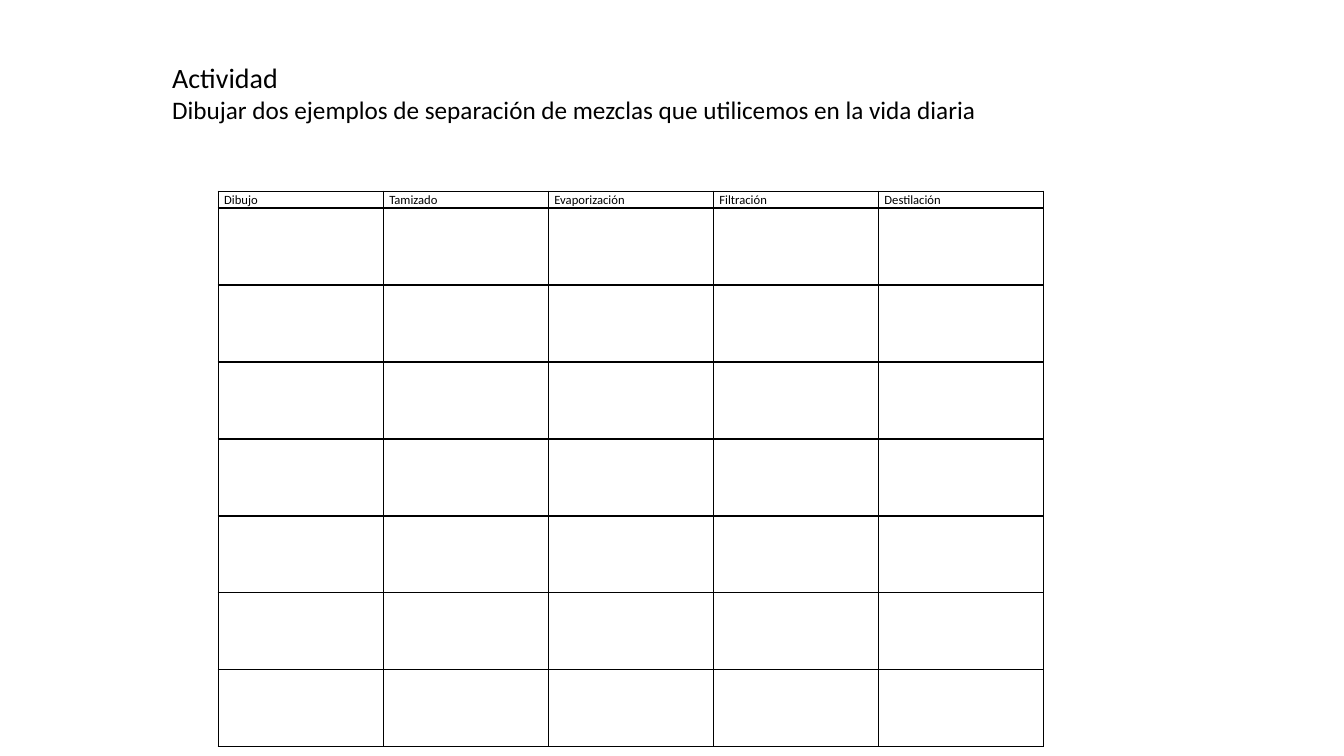
from lxml.etree import SubElement
from pptx import Presentation
from pptx.dml.color import RGBColor
from pptx.enum.text import MSO_ANCHOR
from pptx.oxml.ns import qn
from pptx.util import Cm, Pt

COLORS = {"ink": "000000"}
FONT = "Calibri"
HEADINGS = ["Dibujo", "Tamizado", "Evaporización", "Filtración", "Destilación"]
INSTRUCTIONS = [
    ("Actividad", 20),
    ("Dibujar dos ejemplos de separación de mezclas que utilicemos en la vida diaria", 18),
]
DRAWING_ROWS = 7
COLUMN_WIDTH = Cm(4.16)
HEADING_HEIGHT = Cm(0.42)
DRAWING_HEIGHT = Cm(1.94)
CELL_FORMAT = {"margin_left": Cm(0.15), "margin_right": Cm(0.15),
               "margin_top": 0, "margin_bottom": 0}


def write(paragraph, text, size):
    run = paragraph.add_run()
    run.text = text
    run.font.name = FONT
    run.font.size = Pt(size)
    run.font.color.rgb = RGBColor.from_string(COLORS["ink"])


def add_borders(cell):
    properties = cell._tc.get_or_add_tcPr()
    for side in ("a:lnL", "a:lnR", "a:lnT", "a:lnB"):
        line = SubElement(properties, qn(side), w=str(Pt(1)))
        fill = SubElement(line, qn("a:solidFill"))
        SubElement(fill, qn("a:srgbClr"), val=COLORS["ink"])


presentation = Presentation()
presentation.slide_width = Cm(33.87)
presentation.slide_height = Cm(19.05)
slide = presentation.slides.add_slide(presentation.slide_layouts[6])

# Activity table
table = slide.shapes.add_table(
    DRAWING_ROWS + 1, len(HEADINGS), Cm(5.5), Cm(4.82),
    COLUMN_WIDTH * len(HEADINGS), HEADING_HEIGHT + DRAWING_HEIGHT * DRAWING_ROWS,
).table
table.first_row = False
table.horz_banding = False
for column in table.columns:
    column.width = COLUMN_WIDTH
for index, row in enumerate(table.rows):
    row.height = DRAWING_HEIGHT if index else HEADING_HEIGHT
    for cell in row.cells:
        for name, value in CELL_FORMAT.items():
            setattr(cell, name, value)
        add_borders(cell)
        cell.fill.background()
for cell, heading in zip(table.rows[0].cells, HEADINGS):
    paragraph = cell.text_frame.paragraphs[0]
    paragraph.line_spacing = 1.07
    write(paragraph, heading, 9)

# Instructions
text_frame = slide.shapes.add_textbox(Cm(4.09), Cm(1.4), Cm(29), Cm(1.9)).text_frame
text_frame.word_wrap = True
text_frame.vertical_anchor = MSO_ANCHOR.TOP
for index, (text, size) in enumerate(INSTRUCTIONS):
    paragraph = text_frame.add_paragraph() if index else text_frame.paragraphs[0]
    write(paragraph, text, size)

presentation.save("out.pptx")
